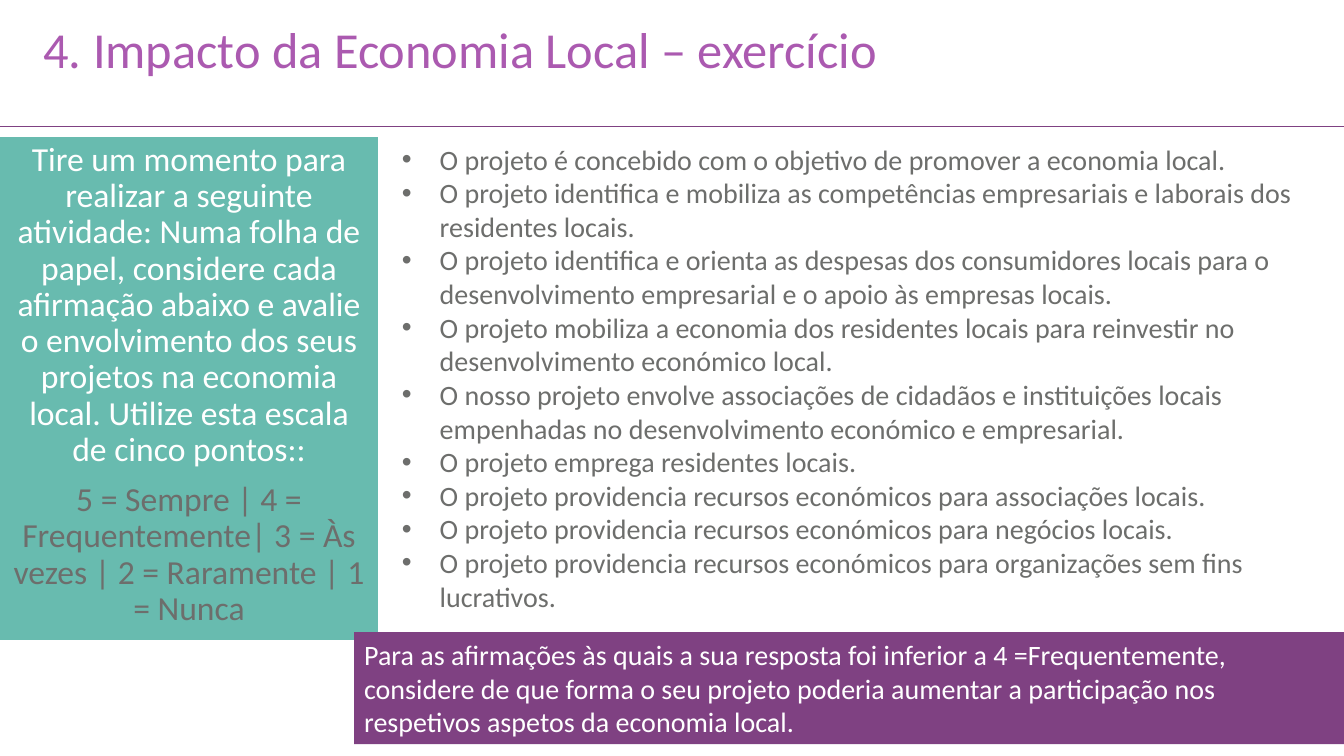
from lxml import etree
from pptx import Presentation
from pptx.dml.color import RGBColor
from pptx.enum.shapes import MSO_CONNECTOR as Connector, MSO_SHAPE as Shape
from pptx.enum.text import MSO_ANCHOR as Anchor, PP_ALIGN as Align
from pptx.oxml.ns import qn
from pptx.util import Pt

COLORS = {"purple": "7F4182", "lilac": "AB5AB0", "teal": "68BBAF",
          "grey": "6D6E6C", "white": "FFFFFF"}
FONT = "Calibri"
WIDTH, HEIGHT = 960, 540
BULLET_INDENT = 27

TITLE = "4. Impacto da Economia Local – exercício"
INSTRUCTION = (
    "Tire um momento para realizar a seguinte atividade: Numa folha de papel, "
    "considere cada afirmação abaixo e avalie o envolvimento dos seus projetos "
    "na economia local. Utilize esta escala de cinco pontos::")
SCALE = "5 = Sempre | 4 = Frequentemente| 3 = Às vezes | 2 = Raramente | 1 = Nunca"
STATEMENTS = [
    "O projeto é concebido com o objetivo de promover a economia local.",
    "O projeto identifica e mobiliza as competências empresariais e laborais "
    "dos residentes locais.",
    "O projeto identifica e orienta as despesas dos consumidores locais para o "
    "desenvolvimento empresarial e o apoio às empresas locais.",
    "O projeto mobiliza a economia dos residentes locais para reinvestir no "
    "desenvolvimento económico local.",
    "O nosso projeto envolve associações de cidadãos e instituições locais "
    "empenhadas no desenvolvimento económico e empresarial.",
    "O projeto emprega residentes locais.",
    "O projeto providencia recursos económicos para associações locais.",
    "O projeto providencia recursos económicos para negócios locais.",
    "O projeto providencia recursos económicos para organizações sem fins "
    "lucrativos.",
]
REFLECTION = (
    "Para as afirmações às quais a sua resposta foi inferior a 4 =Frequentemente, "
    "considere de que forma o seu projeto poderia aumentar a participação nos "
    "respetivos aspetos da economia local.")


def rgb(name):
    return RGBColor.from_string(COLORS[name])


def add_bullet(para):
    props = para._p.get_or_add_pPr()
    props.set("marL", str(Pt(BULLET_INDENT)))
    props.set("indent", str(-Pt(BULLET_INDENT)))
    etree.SubElement(props, qn("a:buFont")).set("typeface", "Arial")
    etree.SubElement(props, qn("a:buChar")).set("char", "•")


def write(frame, text, *, size, color, align=Align.LEFT, spacing=None,
          before=0, bullet=False):
    """Fill the frame's empty first paragraph, or append a new one."""
    first = frame.paragraphs[0]
    para = frame.add_paragraph() if first.runs else first
    if bullet:
        add_bullet(para)
    para.alignment = align
    para.space_before = Pt(before)
    if spacing:
        para.line_spacing = spacing
    span = para.add_run()
    span.text = text
    span.font.name = FONT
    span.font.size = Pt(size)
    span.font.color.rgb = rgb(color)


def filled_box(page, box, fill, anchor=Anchor.TOP):
    """Add a plain rectangle and return its text frame."""
    shape = page.shapes.add_shape(Shape.RECTANGLE, *map(Pt, box))
    shape.shadow.inherit = False
    shape.fill.solid()
    shape.fill.fore_color.rgb = rgb(fill)
    shape.line.fill.background()
    frame = shape.text_frame
    frame.word_wrap = True
    frame.vertical_anchor = anchor
    return frame


def divider(page, top):
    line = page.shapes.add_connector(Connector.STRAIGHT, 0, Pt(top), Pt(WIDTH), Pt(top))
    line.line.color.rgb = rgb("purple")
    line.line.width = Pt(0.5)
    etree.SubElement(line._element.spPr, qn("a:effectLst"))


def title(page, box):
    frame = filled_box(page, box, "white")
    write(frame, TITLE, size=36, color="lilac", spacing=0.9)


def instruction_panel(page, box):
    frame = filled_box(page, box, "teal")
    style = {"size": 24, "align": Align.CENTER, "spacing": 0.9}
    write(frame, INSTRUCTION, color="white", **style)
    write(frame, SCALE, color="grey", before=10, **style)


def statement_list(page, box):
    frame = page.shapes.add_textbox(*map(Pt, box)).text_frame
    frame.word_wrap = True
    for statement in STATEMENTS:
        write(frame, statement, size=20, color="grey", bullet=True)


def reflection_banner(page, box):
    frame = filled_box(page, box, "purple", Anchor.MIDDLE)
    write(frame, REFLECTION, size=20, color="white")


def main():
    deck = Presentation()
    deck.slide_width, deck.slide_height = Pt(WIDTH), Pt(HEIGHT)
    page = deck.slides.add_slide(deck.slide_layouts[6])
    divider(page, 90.5)
    instruction_panel(page, (0, 98, 270, 359))
    title(page, (24, 14.5, 662, 69))
    statement_list(page, (280, 98, 662, 346))
    reflection_banner(page, (253, 451.5, WIDTH - 253, 80))
    deck.save("out.pptx")


if __name__ == "__main__":
    main()
